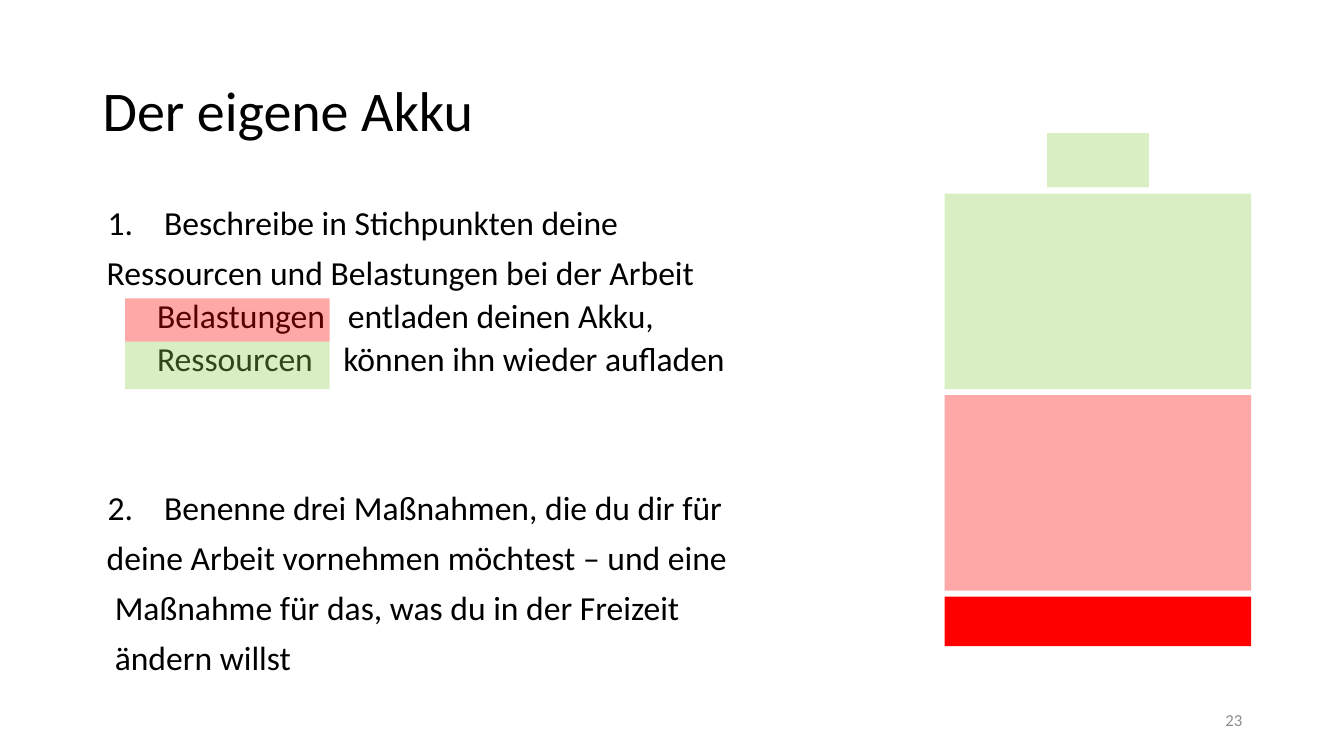
from pptx import Presentation
from pptx.dml.color import RGBColor
from pptx.enum.shapes import MSO_SHAPE
from pptx.enum.text import MSO_ANCHOR, PP_ALIGN
from pptx.oxml.ns import qn
from pptx.util import Inches, Pt
from lxml import etree

RECT = MSO_SHAPE.RECTANGLE
TOP, MIDDLE = MSO_ANCHOR.TOP, MSO_ANCHOR.MIDDLE
LEFT, RIGHT = PP_ALIGN.LEFT, PP_ALIGN.RIGHT
BLACK = RGBColor(0x00, 0x00, 0x00)
GREY = RGBColor(0x8C, 0x8C, 0x8C)
RED = RGBColor(0xFF, 0x00, 0x00)
GREEN = RGBColor(0x92, 0xD0, 0x50)
FONT = "Calibri"
PALE = 34  # percent opacity

TITLE = "Der eigene Akku"
PAGE = "23"

# text, left margin, space before, number of the task
TASKS = [
    ("Beschreibe in Stichpunkten deine", 0.61, 0, 1),
    ("Ressourcen und Belastungen bei der Arbeit", 0.04, 9.6, None),
    (("Belastungen", 10.8, "entladen deinen Akku,"), 0.54, 4.8, None),
    (("Ressourcen", 16.2, "können ihn wieder aufladen"), 0.54, 4.8, None),
    ("Benenne drei Maßnahmen, die du dir für", 0.61, 81, 2),
    ("deine Arbeit vornehmen möchtest – und eine", 0.04, 9.6, None),
    ("Maßnahme für das, was du in der Freizeit", 0.12, 9.6, None),
    ("ändern willst", 0.12, 9.6, None),
]
NUMBER_HANG = 0.56

# battery parts from top to bottom: width, height, colour, opacity
BATTERY = [
    (1.01, 0.54, GREEN, PALE),
    (3.04, 1.94, GREEN, PALE),
    (3.04, 1.94, RED, PALE),
    (3.04, 0.49, RED, 100),
]
BATTERY_CENTER, BATTERY_TOP, BATTERY_GAP = 10.89, 1.32, 0.06

# word markers from top to bottom: height, colour
MARKERS = [(0.43, RED), (0.47, GREEN)]
MARKER_LEFT, MARKER_TOP, MARKER_WIDTH = 1.24, 2.96, 2.03


def add_text_frame(shapes, box, anchor):
    tf = shapes.add_textbox(*map(Inches, box)).text_frame
    tf.word_wrap = True
    tf.vertical_anchor = anchor
    return tf


def add_run(p, text, size, color=BLACK):
    r = p.add_run()
    r.text = text
    for name, value in {"name": FONT, "size": Pt(size)}.items():
        setattr(r.font, name, value)
    r.font.color.rgb = color
    return r


def add_line(shapes, box, text, size, color=BLACK, align=LEFT):
    """Single line of text, centred vertically in its box."""
    p = add_text_frame(shapes, box, MIDDLE).paragraphs[0]
    p.alignment, p.line_spacing = align, 0.9
    add_run(p, text, size, color)


def add_block(shapes, box, color, opacity):
    sp = shapes.add_shape(RECT, *map(Inches, box))
    sp.shadow.inherit = False
    sp.fill.solid()
    sp.fill.fore_color.rgb = color
    sp.line.fill.background()
    if opacity < 100:
        rgb = sp.fill._xPr.find(".//" + qn("a:srgbClr"))
        etree.SubElement(rgb, qn("a:alpha"), val=str(opacity * 1000))


def add_tasks(shapes, box):
    tf = add_text_frame(shapes, box, TOP)
    for i, (text, margin, before, number) in enumerate(TASKS):
        p = tf.paragraphs[0] if i == 0 else tf.add_paragraph()
        p.line_spacing, p.space_before = 0.9, Pt(before)
        pPr = p._p.get_or_add_pPr()
        pPr.set("marL", str(Inches(margin)))
        pPr.set("indent", str(Inches(-NUMBER_HANG if number else 0)))
        if number:
            etree.SubElement(pPr, qn("a:buFont"), typeface=FONT)
            etree.SubElement(pPr, qn("a:buAutoNum"), type="arabicPeriod", startAt=str(number))
        else:
            etree.SubElement(pPr, qn("a:buNone"))
        if isinstance(text, str):
            add_run(p, text, 24)
        else:
            word, gap, rest = text
            add_run(p, word, 24)
            space = add_run(p, " ", 24)
            space._r.get_or_add_rPr().set("spc", str(round(gap * 100)))
            add_run(p, rest, 24)


def main():
    prs = Presentation()
    prs.slide_width, prs.slide_height = Inches(13.33), Inches(7.5)
    s = prs.slides.add_slide(prs.slide_layouts[6])

    add_line(s.shapes, (0.92, 0.4, 11.5, 1.45), TITLE, 40)
    add_tasks(s.shapes, (0.92, 2, 11.5, 4.76))

    battery = s.shapes.add_group_shape()
    top = BATTERY_TOP
    for width, height, color, opacity in BATTERY:
        box = (BATTERY_CENTER - width / 2, top, width, height)
        add_block(battery.shapes, box, color, opacity)
        top += height + BATTERY_GAP

    top = MARKER_TOP
    for height, color in MARKERS:
        add_block(s.shapes, (MARKER_LEFT, top, MARKER_WIDTH, height), color, PALE)
        top += height

    add_line(s.shapes, (9.42, 6.95, 3, 0.4), PAGE, 12, GREY, RIGHT)
    prs.save("out.pptx")


if __name__ == "__main__":
    main()
